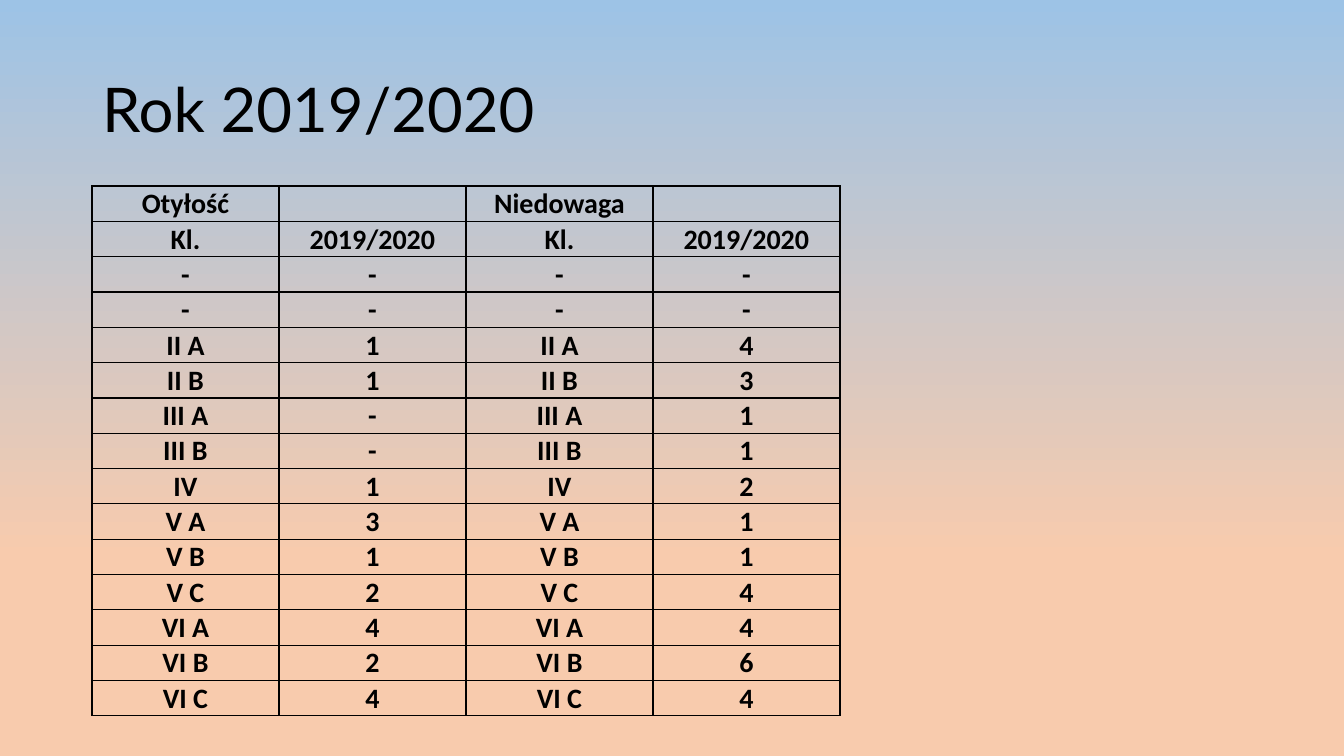
from lxml import etree
from pptx import Presentation
from pptx.dml.color import RGBColor
from pptx.enum.text import MSO_ANCHOR, MSO_AUTO_SIZE, PP_ALIGN
from pptx.oxml.ns import qn
from pptx.util import Pt

LEFT, CENTER = PP_ALIGN.LEFT, PP_ALIGN.CENTER
MIDDLE, NO_AUTOFIT = MSO_ANCHOR.MIDDLE, MSO_AUTO_SIZE.NONE

TITLE = "Rok 2019/2020"
HEADINGS = [
    ("Otyłość", "", "Niedowaga", ""),
    ("Kl.", "2019/2020", "Kl.", "2019/2020"),
]
CLASS_COUNTS = [
    ("-", "-", "-"),
    ("-", "-", "-"),
    ("II A", "1", "4"),
    ("II B", "1", "3"),
    ("III A", "-", "1"),
    ("III B", "-", "1"),
    ("IV", "1", "2"),
    ("V A", "3", "1"),
    ("V B", "1", "1"),
    ("V C", "2", "4"),
    ("VI A", "4", "4"),
    ("VI B", "2", "6"),
    ("VI C", "4", "4"),
]
SKY_TO_PEACH = [(0, "9DC3E6"), (0.74, "F8CBAD")]
INK = "000000"
TITLE_FONT = {"name": "Lato", "size": Pt(44), "bold": False}
CELL_FONT = {"name": "Calibri", "size": Pt(20), "bold": True}

SLIDE_W, SLIDE_H = 1344, 756
MARGIN_X = 92
TITLE_BOX = (MARGIN_X, 40, 1159, 146)
TABLE_TOP = 186
COLUMN_W, ROW_H = 187, 35


def px(length):
    return round(length * 914400 / 100.8)


def color(value):
    return RGBColor.from_string(value)


def apply(target, values):
    for name, value in values.items():
        setattr(target, name, value)


def style_run(run, font_values):
    apply(run.font, font_values)
    run.font.color.rgb = color(INK)


def draw_borders(cell):
    properties = cell._tc.get_or_add_tcPr()
    for position, side in enumerate(("lnL", "lnR", "lnT", "lnB")):
        border = etree.Element(qn(f"a:{side}"), w=str(Pt(1)))
        solid = etree.SubElement(border, qn("a:solidFill"))
        etree.SubElement(solid, qn("a:srgbClr"), val=INK)
        properties.insert(position, border)


def fill_cell(cell, label):
    apply(cell, {
        "margin_left": px(1), "margin_right": px(1),
        "margin_top": px(1), "margin_bottom": 0,
        "vertical_anchor": MIDDLE,
    })
    cell.fill.background()
    draw_borders(cell)
    paragraph = cell.text_frame.paragraphs[0]
    paragraph.alignment = CENTER
    if label:
        run = paragraph.add_run()
        run.text = label
        style_run(run, CELL_FONT)


def paint_background(slide):
    fill = slide.background.fill
    fill.gradient()
    fill.gradient_angle = 270
    for stop, (position, shade) in zip(fill.gradient_stops, SKY_TO_PEACH):
        stop.position = position
        stop.color.rgb = color(shade)


def place_title(title):
    apply(title, dict(zip(("left", "top", "width", "height"), map(px, TITLE_BOX))))
    apply(title.text_frame, {
        "text": TITLE, "word_wrap": True,
        "auto_size": NO_AUTOFIT, "vertical_anchor": MIDDLE,
    })
    paragraph = title.text_frame.paragraphs[0]
    apply(paragraph, {"alignment": LEFT, "line_spacing": 0.9})
    style_run(paragraph.runs[0], TITLE_FONT)


def add_class_table(slide):
    rows = HEADINGS + [
        (name, obese, name, underweight) for name, obese, underweight in CLASS_COUNTS
    ]
    columns = len(rows[0])
    table = slide.shapes.add_table(
        len(rows), columns, px(MARGIN_X), px(TABLE_TOP),
        px(COLUMN_W * columns), px(ROW_H * len(rows)),
    ).table
    apply(table, {"first_row": False, "horz_banding": False})
    for row, labels in zip(table.rows, rows):
        row.height = px(ROW_H)
        for cell, label in zip(row.cells, labels):
            fill_cell(cell, label)


def main():
    deck = Presentation()
    apply(deck, {"slide_width": px(SLIDE_W), "slide_height": px(SLIDE_H)})
    slide = deck.slides.add_slide(deck.slide_layouts[5])
    paint_background(slide)
    place_title(slide.shapes.title)
    add_class_table(slide)
    deck.save("out.pptx")


if __name__ == "__main__":
    main()
